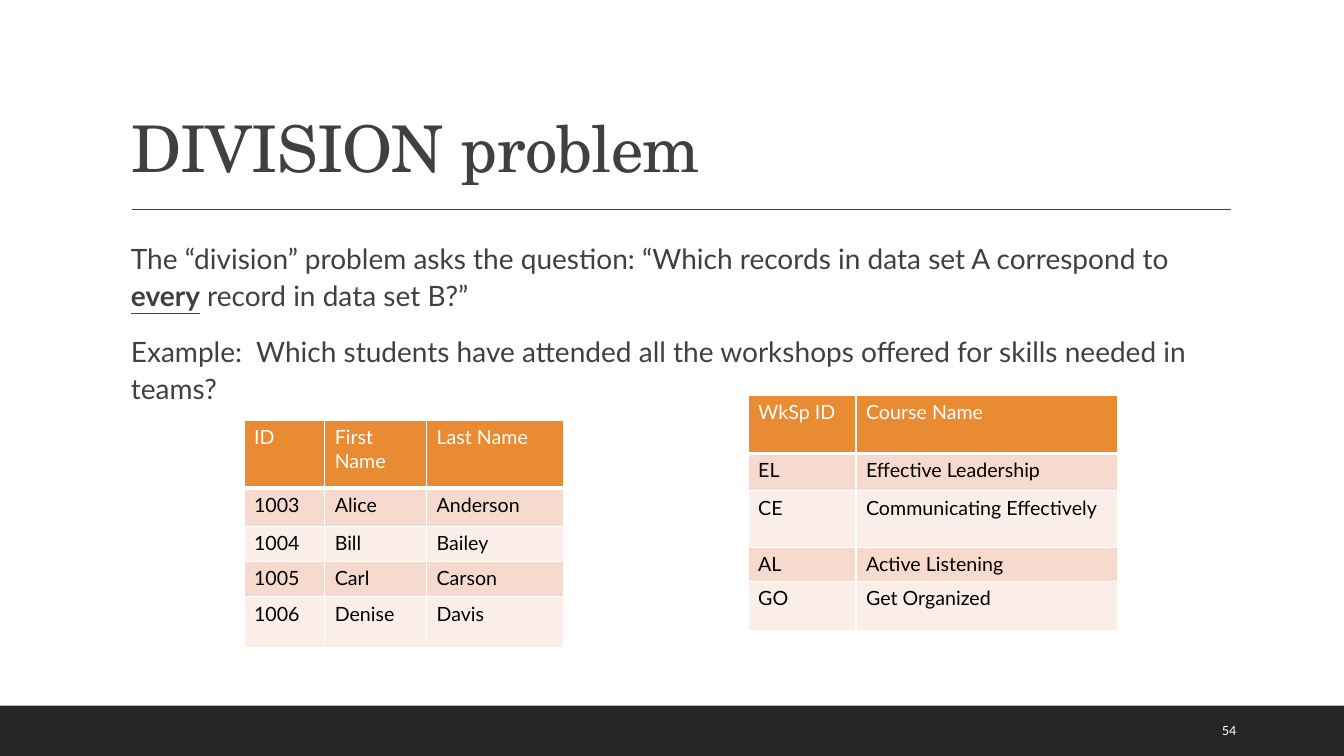
from lxml.etree import SubElement
from pptx import Presentation
from pptx.dml.color import RGBColor
from pptx.enum.shapes import MSO_CONNECTOR, MSO_SHAPE
from pptx.enum.text import MSO_ANCHOR, MSO_AUTO_SIZE, PP_ALIGN
from pptx.oxml import parse_xml
from pptx.oxml.ns import nsdecls, qn
from pptx.util import Inches, Pt

COLORS = {
    "ink": "404040", "footer": "262626", "white": "FFFFFF", "black": "000000",
    "header": "E88B33", "band": "F6DACE", "light": "FBEEE8",
}
WIDTH, HEIGHT = 13.33, 7.5
LEFT, CONTENT_WIDTH = 1.2, 11
FOOTER_HEIGHT = HEIGHT / 15


def color(name):
    return RGBColor.from_string(COLORS[name])


def add_text(paragraph, text, size=20, font="Lato", ink="ink", emphasis=None):
    run = paragraph.add_run()
    run.text = text
    run.font.size = Pt(size)
    run.font.name = font
    run.font.color.rgb = color(ink)
    run.font.bold = run.font.underline = emphasis
    return run


presentation = Presentation()
presentation.slide_width = Inches(WIDTH)
presentation.slide_height = Inches(HEIGHT)
slide = presentation.slides.add_slide(presentation.slide_layouts[5])

footer = slide.shapes.add_shape(
    MSO_SHAPE.RECTANGLE, 0, Inches(HEIGHT - FOOTER_HEIGHT), Inches(WIDTH), Inches(FOOTER_HEIGHT))
footer.shadow.inherit = False
footer.fill.solid()
footer.fill.fore_color.rgb = color("footer")
footer.line.fill.background()

rule = slide.shapes.add_connector(
    MSO_CONNECTOR.STRAIGHT, Inches(1.31), Inches(2.08), Inches(12.21), Inches(2.08))
rule.line.color.rgb = color("ink")
rule.line.width = Pt(1)
SubElement(rule.element.spPr, qn("a:effectLst"))

title = slide.shapes.title
title.left, title.top = Inches(LEFT), Inches(0.31)
title.width, title.height = Inches(CONTENT_WIDTH), Inches(1.59)
title.text_frame.auto_size = MSO_AUTO_SIZE.NONE
title.text_frame.vertical_anchor = MSO_ANCHOR.BOTTOM
paragraph = title.text_frame.paragraphs[0]
paragraph.alignment = PP_ALIGN.LEFT
paragraph.line_spacing = 0.9
heading = add_text(paragraph, "DIVISION problem", size=46, font="TeX Gyre Schola")
heading.font._element.set("spc", "-50")

body = slide.shapes.add_textbox(
    Inches(LEFT), Inches(2.31), Inches(CONTENT_WIDTH), Inches(4.11)).text_frame
body.word_wrap = True
body.margin_right = 0
statements = [
    [("The “division” problem asks the question: “Which records in data set A correspond to ", None),
     ("every", True),
     (" record in data set B?”", None)],
    [("Example:  Which students have attended all the workshops offered for skills needed in teams?", None)],
]
for index, statement in enumerate(statements):
    paragraph = body.add_paragraph() if index else body.paragraphs[0]
    paragraph.line_spacing = 1.1
    paragraph.space_before = Pt(12)
    paragraph.space_after = Pt(2)
    for text, emphasis in statement:
        add_text(paragraph, text, emphasis=emphasis)

number = slide.shapes.add_textbox(Inches(12.02), Inches(7.05), Inches(0.85), Inches(0.4)).text_frame
number.vertical_anchor = MSO_ANCHOR.MIDDLE
number.word_wrap = True
add_text(number.paragraphs[0], "54", size=9, ink="white")

tables = [
    (2.42, 4.17, [0.8, 1.01, 1.36], [0.67, 0.38, 0.35, 0.35, 0.5], [
        ["ID", "First Name", "Last Name"],
        ["1003", "Alice", "Anderson"],
        ["1004", "Bill", "Bailey"],
        ["1005", "Carl", "Carson"],
        ["1006", "Denise", "Davis"],
    ]),
    (7.42, 3.92, [1.07, 2.59], [0.58, 0.37, 0.56, 0.34, 0.49], [
        ["WkSp ID", "Course Name"],
        ["EL", "Effective Leadership"],
        ["CE", "Communicating Effectively"],
        ["AL", "Active Listening"],
        ["GO", "Get Organized"],
    ]),
]
for left, top, column_widths, row_heights, records in tables:
    table = slide.shapes.add_table(
        len(row_heights), len(column_widths), Inches(left), Inches(top),
        Inches(sum(column_widths)), Inches(sum(row_heights))).table
    for column, width in zip(table.columns, column_widths):
        column.width = Inches(width)
    for row_index, (row, height, record) in enumerate(zip(table.rows, row_heights, records)):
        row.height = Inches(height)
        is_header = row_index == 0
        fill = "header" if is_header else ("light", "band")[row_index % 2]
        for cell, text in zip(row.cells, record):
            properties = cell._tc.get_or_add_tcPr()
            for side in "LRTB":
                border_width = Pt(3 if is_header and side == "B" else 1)
                properties.append(parse_xml(
                    f'<a:ln{side} {nsdecls("a")} w="{border_width}"><a:solidFill>'
                    f'<a:srgbClr val="{COLORS["white"]}"/></a:solidFill></a:ln{side}>'))
            cell.fill.solid()
            cell.fill.fore_color.rgb = color(fill)
            run = add_text(cell.text_frame.paragraphs[0], text, size=14,
                           ink="white" if is_header else "black", emphasis=False)

presentation.save("out.pptx")
